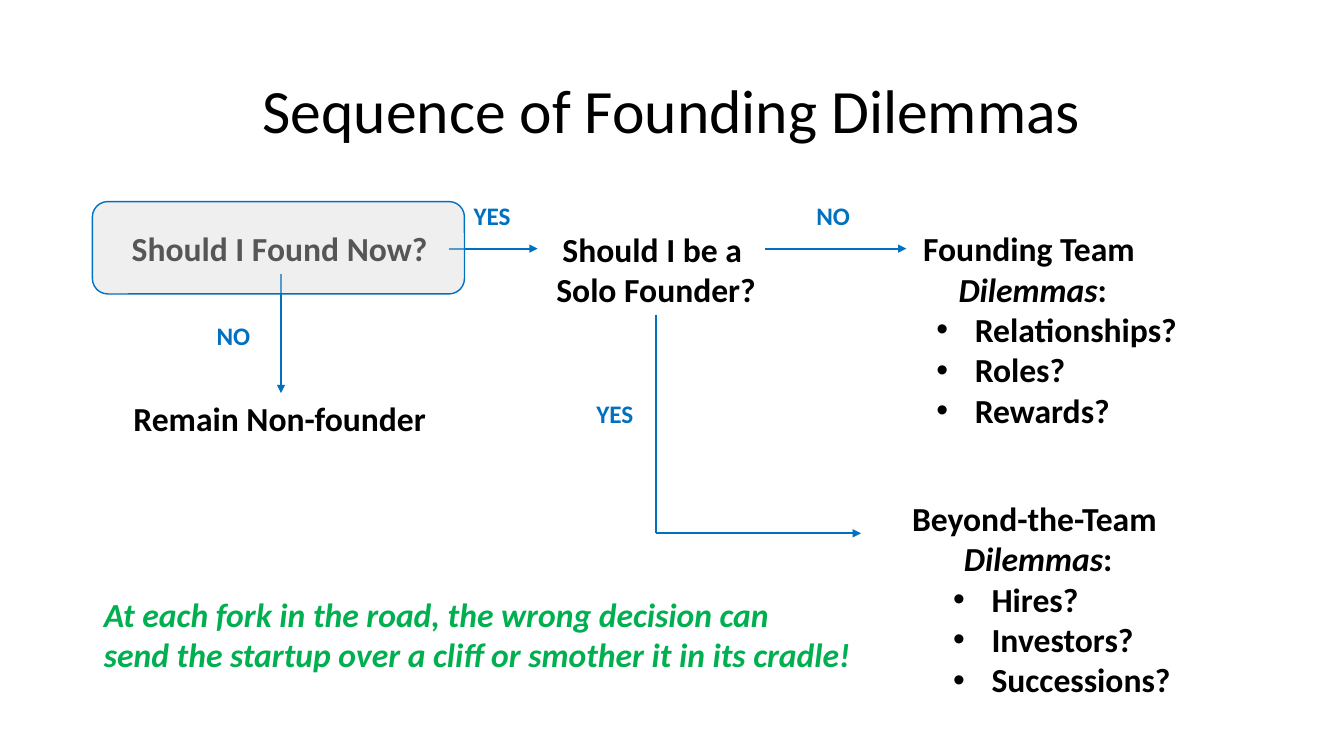
from lxml.etree import SubElement
from pptx import Presentation
from pptx.dml.color import RGBColor
from pptx.enum.shapes import MSO_CONNECTOR, MSO_SHAPE
from pptx.enum.text import MSO_ANCHOR, MSO_AUTO_SIZE, PP_ALIGN
from pptx.oxml.ns import qn
from pptx.util import Inches, Pt

COLORS = {"text": "000000", "blue": "0070C0", "green": "00B050", "gray": "D9D9D9"}

presentation = Presentation()
presentation.slide_width = Inches(13.33)
presentation.slide_height = Inches(7.5)
slide = presentation.slides.add_slide(presentation.slide_layouts[6])

# Grid of 160 columns by 90 rows
COLUMN = presentation.slide_width / 160
ROW = presentation.slide_height / 90


def add_text(place, lines, size=24, color="text", bold=True, align=PP_ALIGN.LEFT):
    """Add a text box; lines are lists of (text, italic) runs in one paragraph."""
    left, top, width, height = place
    box = slide.shapes.add_textbox(
        int(left * COLUMN), int(top * ROW), int(width * COLUMN), int(height * ROW))
    frame = box.text_frame
    frame.word_wrap = False
    frame.auto_size = MSO_AUTO_SIZE.SHAPE_TO_FIT_TEXT
    paragraph = frame.paragraphs[0]
    paragraph.alignment = align
    for number, line in enumerate(lines):
        if number:
            paragraph.add_line_break()
        for text, italic in line:
            run = paragraph.add_run()
            run.text = text
            run.font.name = "Calibri"
            run.font.size = Pt(size)
            run.font.bold = bold
            run.font.italic = italic
            run.font.color.rgb = RGBColor.from_string(COLORS[color])
    return box


def add_line(start, end, arrow=True):
    """Add a straight blue line between two grid points."""
    line = slide.shapes.add_connector(
        MSO_CONNECTOR.STRAIGHT, int(start[0] * COLUMN), int(start[1] * ROW),
        int(end[0] * COLUMN), int(end[1] * ROW))
    line.line.color.rgb = RGBColor.from_string(COLORS["blue"])
    line.line.width = Pt(1.5)
    if arrow:
        SubElement(line.line._get_or_add_ln(), qn("a:tailEnd"), type="triangle")
    SubElement(line._element.spPr, qn("a:effectLst"))
    return line


# Title
title = add_text((11, 4.8, 138, 17.4), [[("Sequence of Founding Dilemmas", False)]],
                 size=44, bold=False, align=PP_ALIGN.CENTER)
title.text_frame.word_wrap = True
title.text_frame.auto_size = MSO_AUTO_SIZE.NONE
title.text_frame.vertical_anchor = MSO_ANCHOR.MIDDLE
title.text_frame.paragraphs[0].line_spacing = 0.9

# Questions and the first outcome
found_now = add_text((14.5, 26.6, 37.9, 6), [[("Should I Found Now?", False)]])
non_founder = add_text((14.7, 46.8, 37.5, 6), [[("Remain Non-founder", False)]])
solo_founder = add_text((64.9, 26.6, 26.4, 10.9),
                        [[("Should I be a ", False)], [("Solo Founder?", False)]],
                        align=PP_ALIGN.CENTER)

# Dilemma lists
dilemmas = [
    ((104.3, 26.6, 37.3, 25.4), "Founding Team ", ["Relationships?", "Roles?", "Rewards?"]),
    ((106.3, 58.7, 34.6, 25.4), "Beyond-the-Team ", ["Hires?", "Investors?", "Successions?"]),
]
for place, heading, items in dilemmas:
    box = add_text(place, [[(heading, False)], [("Dilemmas", True), (":", False)]],
                   align=PP_ALIGN.CENTER)
    for item in items:
        paragraph = box.text_frame.add_paragraph()
        paragraph.level = 1
        properties = paragraph._p.get_or_add_pPr()
        properties.set("marL", str(Inches(0.88)))
        properties.set("indent", str(Inches(-0.38)))
        SubElement(properties, qn("a:buFont"), typeface="Arial")
        SubElement(properties, qn("a:buChar"), char="•")
        run = paragraph.add_run()
        run.text = item
        run.font.name = "Calibri"
        run.font.size = Pt(24)
        run.font.bold = True
        run.font.color.rgb = RGBColor.from_string(COLORS["text"])

# Decision arrows
stay_arrow = add_line((33.45, 32.6), (33.45, 46.8))
stay_arrow.begin_connect(found_now, 2)
stay_arrow.end_connect(non_founder, 0)
add_line((53.4, 29.6), (64, 29.6))
add_line((91.1, 29.6), (107.9, 29.6))
solo_line = add_line((78.1, 37.5), (78.1, 63.5), arrow=False)
solo_line.begin_connect(solo_founder, 2)
add_line((78.1, 63.5), (102.5, 63.5))

# Answers beside the arrows
for left, top, answer in [(55.2, 23.3, "YES"), (24.6, 37.6, "NO"),
                          (96, 23.3, "NO"), (69.8, 46.8, "YES")]:
    width = 6.8 if answer == "YES" else 6.5
    add_text((left, top, width, 4.8), [[(answer, False)]], size=18, color="blue")

# Translucent highlight over the first question
highlight = slide.shapes.add_shape(
    MSO_SHAPE.ROUNDED_RECTANGLE, int(11 * COLUMN), int(24 * ROW),
    int(44.3 * COLUMN), int(11 * ROW))
highlight.shadow.inherit = False
highlight.fill.solid()
highlight.fill.fore_color.rgb = RGBColor.from_string(COLORS["gray"])
fill_color = highlight._element.spPr.find(qn("a:solidFill")).find(qn("a:srgbClr"))
SubElement(fill_color, qn("a:alpha"), val="40000")
highlight.line.color.rgb = RGBColor.from_string(COLORS["blue"])
highlight.line.width = Pt(1)

# Closing warning
add_text((11.2, 70.1, 91.3, 10.9),
         [[("At each fork in the road, the wrong decision can ", True)],
          [("send the startup over a cliff or smother it in its cradle!", True)]],
         color="green")

presentation.save("out.pptx")
